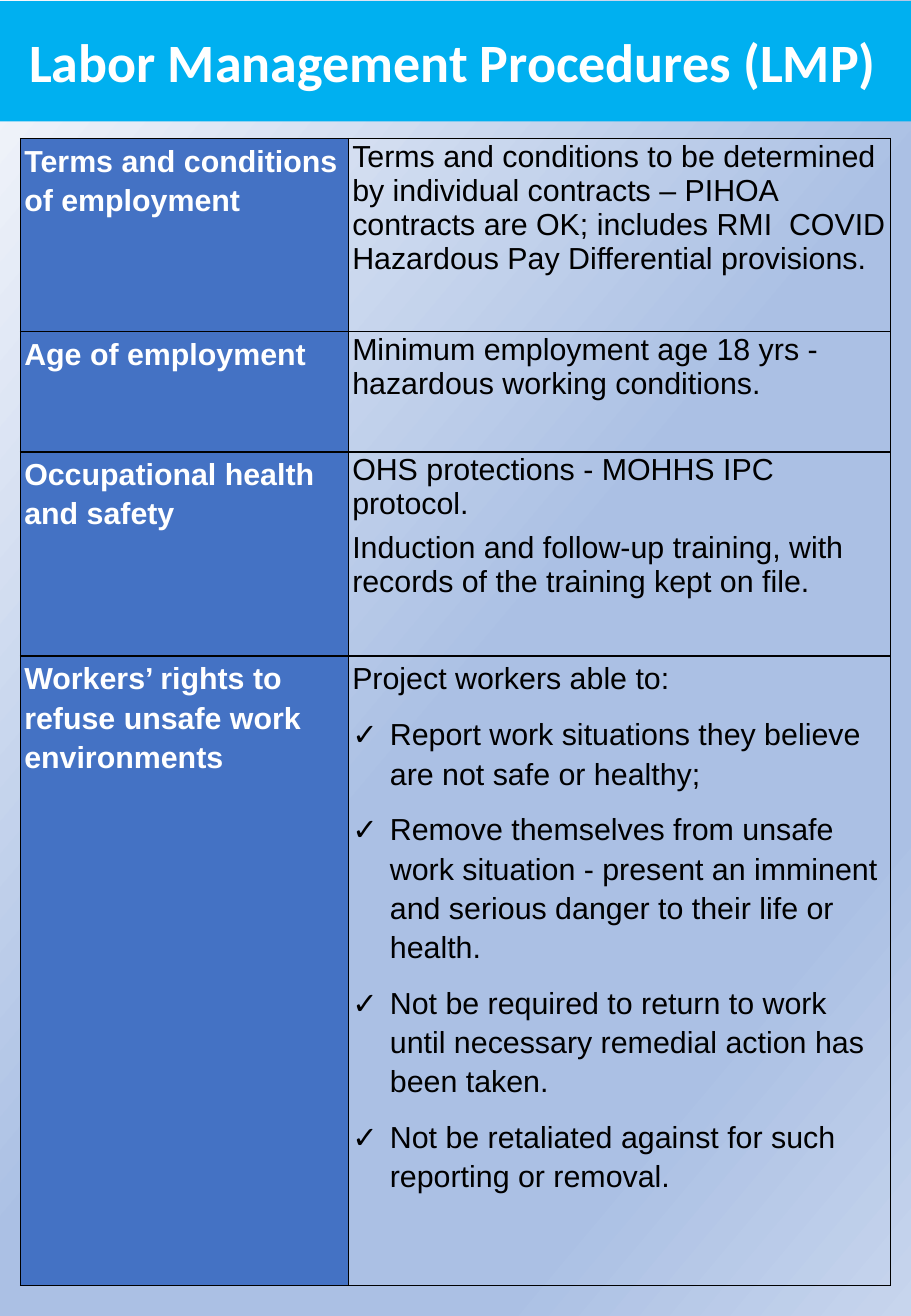
from lxml import etree
from pptx import Presentation
from pptx.dml.color import RGBColor
from pptx.enum.shapes import MSO_SHAPE
from pptx.enum.text import MSO_ANCHOR, MSO_AUTO_SIZE, PP_ALIGN
from pptx.oxml.ns import qn
from pptx.util import Inches, Pt

# Content: heading, paragraphs, checklist, row height
TITLE = "Labor Management Procedures (LMP)"
ROWS = [
    ("Terms and conditions of employment",
     ["Terms and conditions to be determined by individual contracts – PIHOA contracts are OK; "
      "includes RMI  COVID Hazardous Pay Differential provisions."], [], 1.59),
    ("Age of employment",
     ["Minimum employment age 18 yrs - hazardous working conditions."], [], 0.99),
    ("Occupational health and safety",
     ["OHS protections - MOHHS IPC protocol.",
      "Induction and follow-up training, with records of the training kept on file."], [], 1.68),
    ("Workers’ rights to refuse unsafe work environments",
     ["Project workers able to:"],
     ["Report work situations they believe are not safe or healthy;",
      "Remove themselves from unsafe work situation - present an imminent and serious danger "
      "to their life or health.",
      "Not be required to return to work until necessary remedial action has been taken.",
      "Not be retaliated against for such reporting or removal."], 5.18),
]
COLUMN_WIDTHS = [2.7, 4.46]
BACKGROUND_STOPS = [(0, "F6F8FC"), (52, "ABC0E4"), (79, "ABC0E4"), (100, "C7D5ED")]
CYAN, BLUE, WHITE, BLACK = "00B0F0", "4472C4", "FFFFFF", "000000"
LOOSE, TIGHT = (1.15, 10), (1.0, 6)  # line spacing, points after


def color(value):
    return RGBColor.from_string(value)


def add_child(parent, tag, **attributes):
    return etree.SubElement(parent, qn(tag), attributes)


def set_margins(target, left, top, right, bottom):
    target.margin_left, target.margin_top = Inches(left), Inches(top)
    target.margin_right, target.margin_bottom = Inches(right), Inches(bottom)


def format_font(paragraph, name, size, font_color, bold):
    for run in paragraph.runs:
        run.font.name, run.font.size, run.font.bold = name, Pt(size), bold
        run.font.color.rgb = color(font_color)


def add_check_bullet(paragraph):
    properties = paragraph._p.get_or_add_pPr()
    properties.set("marL", str(Inches(0.31)))
    properties.set("indent", str(-Inches(0.31)))
    add_child(properties, "a:buFont", typeface="Arial")
    add_child(properties, "a:buChar", char="✓")


def add_borders(cell):
    properties = cell._tc.get_or_add_tcPr()
    for side in "LRTB":
        line = add_child(properties, f"a:ln{side}", w=str(Pt(1)))
        add_child(add_child(line, "a:solidFill"), "a:srgbClr", val=BLACK)


def fill_cell(cell, paragraphs, checklist, spacing, font_color, bold):
    set_margins(cell, 0.03, 0.01, 0.03, 0)
    add_borders(cell)
    cell.text_frame.text = "\n".join(paragraphs + checklist)
    for index, paragraph in enumerate(cell.text_frame.paragraphs):
        paragraph.line_spacing, paragraph.space_after = spacing[0], Pt(spacing[1])
        format_font(paragraph, "Arial", 18, font_color, bold)
        if index >= len(paragraphs):
            add_check_bullet(paragraph)


presentation = Presentation()
presentation.slide_width, presentation.slide_height = Inches(7.5), Inches(10.83)
slide = presentation.slides.add_slide(presentation.slide_layouts[5])

# Background gradient
background = slide.background.fill
background.gradient()
background.gradient_angle = 320
stop_list = slide.element.find(".//" + qn("a:gsLst"))
for stop in list(stop_list):
    stop_list.remove(stop)
for position, stop_color in BACKGROUND_STOPS:
    stop = add_child(stop_list, "a:gs", pos=str(position * 1000))
    add_child(stop, "a:srgbClr", val=stop_color)

# Title on its bar
bar = slide.shapes.add_shape(MSO_SHAPE.RECTANGLE, 0, Inches(0.01), Inches(7.5), Inches(0.99))
bar.shadow.inherit = False
bar.fill.solid()
bar.fill.fore_color.rgb = color(CYAN)
bar.line.fill.background()

title = slide.shapes.title
title.element.addprevious(bar.element)
title.left, title.top = Inches(0.01), Inches(0.23)
title.width, title.height = Inches(7.44), Inches(0.54)
title_frame = title.text_frame
title_frame.text = TITLE
title_frame.word_wrap = True
title_frame.auto_size = MSO_AUTO_SIZE.NONE
title_frame.vertical_anchor = MSO_ANCHOR.MIDDLE
set_margins(title_frame, 0, 0, 0, 0)
title_frame.paragraphs[0].alignment = PP_ALIGN.CENTER
format_font(title_frame.paragraphs[0], "Calibri", 32, WHITE, True)

# Procedures table
table = slide.shapes.add_table(
    len(ROWS), len(COLUMN_WIDTHS), Inches(0.17), Inches(1.14),
    Inches(sum(COLUMN_WIDTHS)), Inches(sum(row[-1] for row in ROWS))).table
table.first_row = table.horz_banding = False
for column, width in zip(table.columns, COLUMN_WIDTHS):
    column.width = Inches(width)
for row, (heading, paragraphs, checklist, height) in zip(table.rows, ROWS):
    row.height = Inches(height)
    heading_cell, detail_cell = row.cells
    fill_cell(heading_cell, [heading], [], LOOSE, WHITE, True)
    heading_cell.fill.solid()
    heading_cell.fill.fore_color.rgb = color(BLUE)
    fill_cell(detail_cell, paragraphs, checklist, LOOSE if checklist else TIGHT, BLACK, False)
    detail_cell.fill.background()

presentation.save("out.pptx")
